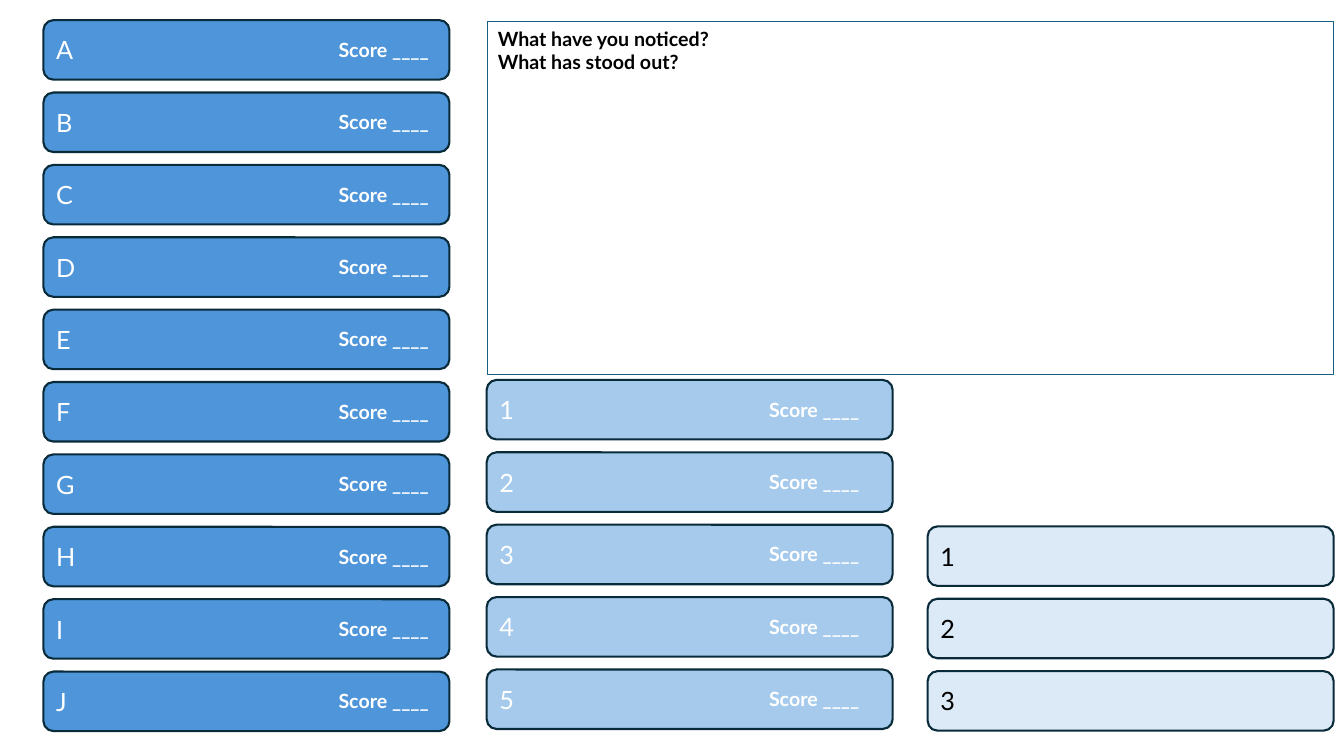
from pptx import Presentation
from pptx import util as u
from pptx.dml.color import RGBColor
from pptx.enum import shapes, text

COLORS = {
    "strong": "4E95D9",
    "medium": "A6CAEC",
    "pale": "DCEAF7",
    "outline": "092A39",
    "frame": "156082",
    "white": "FFFFFF",
    "black": "000000",
}
FONT = "Lato"
CARD_WIDTH, CARD_HEIGHT, CARD_PITCH = 290, 42.5, 51.7
SCORE_WIDTH, SCORE_HEIGHT, SCORE_DROP = 80.6, 24.4, 9


def color(name):
    return RGBColor.from_string(COLORS[name])


def write(frame, content, size=18, ink="white", bold=False,
          anchor=text.MSO_ANCHOR.MIDDLE):
    frame.word_wrap = True
    frame.vertical_anchor = anchor
    frame.text = content
    for paragraph in frame.paragraphs:
        paragraph.alignment = text.PP_ALIGN.LEFT
        paragraph.font.name = FONT
        paragraph.font.size = u.Pt(size)
        paragraph.font.bold = bold
        paragraph.font.color.rgb = color(ink)


class ScoreSheet:
    def __init__(self, slide):
        self.slide = slide

    def box(self, kind, left, top, width, height, line, weight, fill=None):
        box = self.slide.shapes.add_shape(
            kind, u.Pt(left), u.Pt(top), u.Pt(width), u.Pt(height))
        box.shadow.inherit = False
        if fill:
            box.fill.solid()
            box.fill.fore_color.rgb = color(fill)
        else:
            box.fill.background()
        box.line.color.rgb = color(line)
        box.line.width = u.Pt(weight)
        return box

    def card(self, label, left, top, fill, ink):
        card = self.box(shapes.MSO_SHAPE.ROUNDED_RECTANGLE, left, top,
                        CARD_WIDTH, CARD_HEIGHT, "outline", 1.5, fill)
        write(card.text_frame, label, ink=ink)

    def score(self, left, top):
        score = self.slide.shapes.add_textbox(
            u.Pt(left), u.Pt(top), u.Pt(SCORE_WIDTH), u.Pt(SCORE_HEIGHT))
        write(score.text_frame, "Score ____", size=14, bold=True,
              anchor=text.MSO_ANCHOR.TOP)

    def column(self, labels, left, top, fill, ink="white", score_left=None):
        for row, label in enumerate(labels):
            card_top = top + row * CARD_PITCH
            self.card(label, left, card_top, fill, ink)
            if score_left is not None:
                self.score(score_left, card_top + SCORE_DROP)

    def reflection(self, questions, left, top, width, height):
        reflection = self.box(shapes.MSO_SHAPE.RECTANGLE, left, top,
                              width, height, "frame", 0.75)
        write(reflection.text_frame, questions, size=14, ink="black",
              bold=True, anchor=text.MSO_ANCHOR.TOP)


def main():
    deck = Presentation()
    deck.slide_width, deck.slide_height = u.Pt(960), u.Pt(540)
    sheet = ScoreSheet(deck.slides.add_slide(deck.slide_layouts[6]))
    sheet.column("ABCDEFGHIJ", 31, 14.4, "strong", score_left=234.7)
    sheet.column("12345", 347.6, 271.4, "medium", score_left=542.2)
    sheet.column("123", 662.6, 376, "pale", ink="black")
    sheet.reflection("What have you noticed?\nWhat has stood out?",
                     348.5, 15.6, 604, 252)
    deck.save("out.pptx")


if __name__ == "__main__":
    main()
